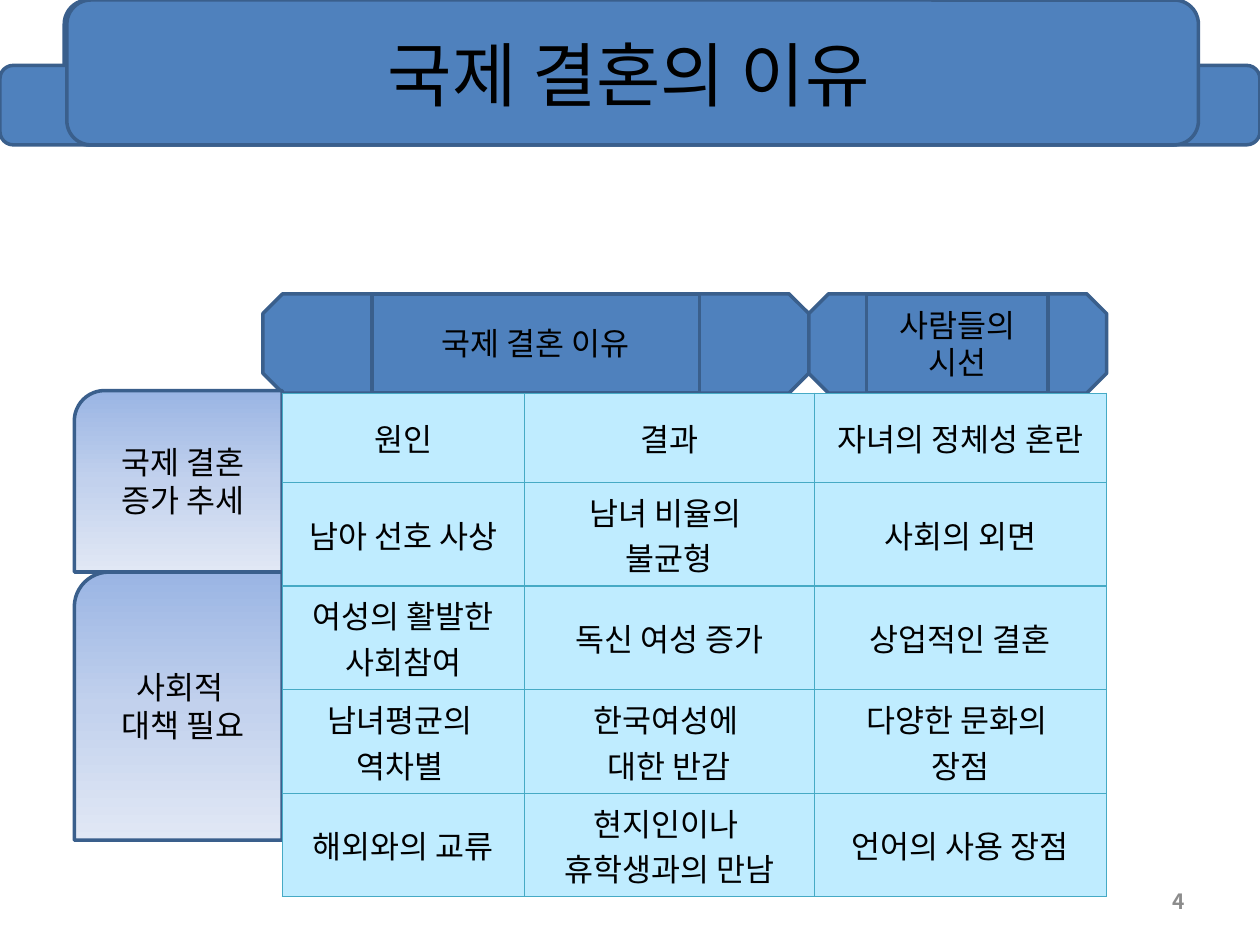
import copy
import pptx
import pptx.util
import pptx.dml.color
import pptx.enum.shapes
import pptx.enum.text
import pptx.oxml
import pptx.oxml.ns
import lxml.etree

Pt = pptx.util.Pt
qn = pptx.oxml.ns.qn
SHAPE = pptx.enum.shapes.MSO_SHAPE
ALIGN = pptx.enum.text.PP_ALIGN
MIDDLE = pptx.enum.text.MSO_ANCHOR.MIDDLE
FONT = "Noto Sans CJK KR"
rgb = pptx.dml.color.RGBColor.from_string


def write(frame, text, size=18, color="000000", align=ALIGN.CENTER, bold=False, spacing=None):
    frame.word_wrap = True
    frame.vertical_anchor = MIDDLE
    frame.text = text
    for paragraph in frame.paragraphs:
        paragraph.alignment = align
        if spacing:
            paragraph.line_spacing = Pt(spacing)
        paragraph.font.size = Pt(size)
        paragraph.font.bold = bold
        paragraph.font.color.rgb = rgb(color)
        paragraph.font.name = FONT
        defaults = paragraph._p.pPr.find(qn("a:defRPr"))
        lxml.etree.SubElement(defaults, qn("a:ea")).set("typeface", FONT)


def block(kind, left, top, width, height):
    shape = slide.shapes.add_shape(kind, Pt(left), Pt(top), Pt(width), Pt(height))
    shape.shadow.inherit = False
    shape.fill.solid()
    shape.fill.fore_color.rgb = rgb("4F81BD")
    shape.line.color.rgb = rgb("3A5F8C")
    shape.line.width = Pt(2)
    return shape


deck = pptx.Presentation()
deck.slide_width, deck.slide_height = Pt(720), Pt(540)
slide = deck.slides.add_slide(deck.slide_layouts[6])

for left, top, width, height in [(36.7, 0, 646.6, 82.8), (0, 37.4, 720, 45.4), (38.2, 0, 646.6, 82.8)]:
    block(SHAPE.ROUNDED_RECTANGLE, left, top, width, height)

title = slide.shapes.add_textbox(Pt(35.3), Pt(1.4), Pt(648), Pt(81.4))
write(title.text_frame, "국제 결혼의 이유", 40)
page_number = slide.shapes.add_textbox(Pt(516), Pt(500.5), Pt(168), Pt(28.8))
write(page_number.text_frame, "4", 12, "8C8C8C", ALIGN.RIGHT, True)

headings = [
    (150.2, 312, 212.5, 187.2, "국제 결혼 이유"),
    (462.2, 170.2, 495.2, 103.8, "사람들의\n시선"),
]
for left, width, label_left, label_width, text in headings:
    block(SHAPE.OCTAGON, left, 167.9, width, 56.8).adjustments[0] = 0.2
    label = block(SHAPE.RECTANGLE, label_left, 167.9, label_width, 56.8)
    write(label.text_frame, text, spacing=21.5)

for top, height, text in [(223.2, 103.7, "국제 결혼\n증가 추세"), (326.9, 153.2, "사회적 \n대책 필요")]:
    tab = block(SHAPE.ROUND_1_RECTANGLE, 42.5, top, 118.8, height)
    tab._element.spPr.xfrm.set("flipH", "1")
    tab.fill.gradient()
    tab.fill.gradient_angle = 270
    first, last = tab.fill.gradient_stops
    first.color.rgb, first.position = rgb("C2D1ED"), 0.5
    last.color.rgb, last.position = rgb("E1E8F5"), 1
    middle_stop = tab._element.spPr.find(".//" + qn("a:gs"))
    middle_stop.addprevious(copy.deepcopy(middle_stop))
    start = tab.fill.gradient_stops[0]
    start.color.rgb, start.position = rgb("9AB5E4"), 0
    write(tab.text_frame, text, spacing=21.5)

reasons = [
    ["원인", "결과", "자녀의 정체성 혼란"],
    ["남아 선호 사상", "남녀 비율의 \n불균형", "사회의 외면"],
    ["여성의 활발한 사회참여", "독신 여성 증가", "상업적인 결혼"],
    ["남녀평균의 \n역차별 ", "한국여성에 \n대한 반감", "다양한 문화의 \n장점"],
    ["해외와의 교류", "현지인이나 \n휴학생과의 만남", "언어의 사용 장점"],
]
column_widths = [138.4, 165.6, 167]
row_heights = [51] + [59.2] * 4
table = slide.shapes.add_table(
    5, 3, Pt(161.3), Pt(224.7), Pt(sum(column_widths)), Pt(sum(row_heights))
).table
for column, width in zip(table.columns, column_widths):
    column.width = Pt(width)
for row, height, texts in zip(table.rows, row_heights, reasons):
    row.height = Pt(height)
    for cell, text in zip(row.cells, texts):
        write(cell.text_frame, text)
        cell.vertical_anchor = MIDDLE
        properties = cell._tc.get_or_add_tcPr()
        for side in ("lnL", "lnR", "lnT", "lnB"):
            border = lxml.etree.SubElement(properties, qn("a:" + side), w=str(Pt(0.75)))
            paint = lxml.etree.SubElement(border, qn("a:solidFill"))
            lxml.etree.SubElement(paint, qn("a:srgbClr"), val="46AAC5")
        cell.fill.solid()
        cell.fill.fore_color.rgb = rgb("BFECFF")

deck.save("out.pptx")
